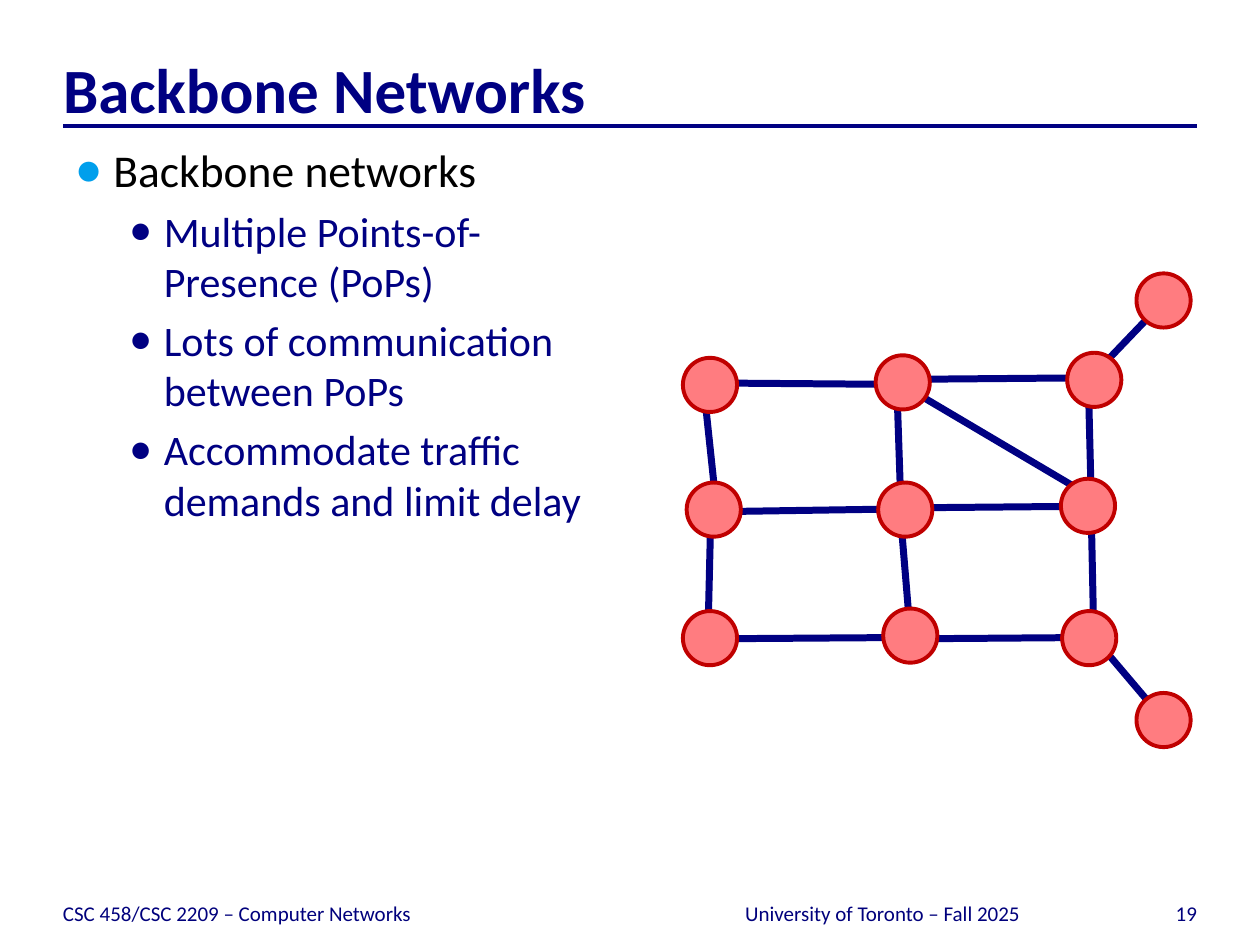
from lxml.etree import SubElement as Sub
from pptx import Presentation
from pptx.dml.color import RGBColor as RGB
from pptx.enum.shapes import MSO_CONNECTOR as Conn, MSO_SHAPE as Form
from pptx.enum.text import MSO_ANCHOR as Anchor, MSO_AUTO_SIZE as Fit, PP_ALIGN as Align
from pptx.oxml.ns import qn
from pptx.util import Inches, Pt

NAVY = RGB(0x00, 0x00, 0x82)
DARK = RGB(0x00, 0x00, 0x7C)
BLACK = RGB(0x00, 0x00, 0x00)
SKY = RGB(0x00, 0x9F, 0xEC)
PINK = RGB(0xFF, 0x7C, 0x80)
RED = RGB(0xC0, 0x00, 0x00)

COLS, ROWS = 100, 75
NODE = 4.3

# Left and top of each node, in grid cells
NODES = [
    (54.2, 28.4), (69.5, 28.2), (84.7, 28),
    (54.5, 38.3), (69.7, 38.3), (84.2, 38),
    (54.2, 48.5), (70.1, 48.3), (84.3, 48.5),
    (90.2, 21.7), (90.2, 55),
]
# Start and end of each link, in grid cells
ACROSS = [
    (70.2, 30.5, 56.9, 30.4), (84.6, 30, 73, 30.1),
    (71, 40.4, 57.7, 40.6), (84.3, 40.2, 72.7, 40.3),
    (71.2, 50.6, 56.8, 50.7), (86, 50.6, 72.7, 50.7),
]
DOWN = [
    (56.8, 39.7, 55.9, 31.2), (71.5, 40.2, 71.2, 31.2), (86.6, 39.3, 86.4, 31.2),
    (56.2, 50, 56.4, 41.5), (72.2, 49.7, 71.5, 41.3), (86.8, 50, 86.6, 40.4),
]
SLANT = [
    (92, 56.7, 87, 50.8), (92, 24.3, 87.6, 28.9), (85.9, 39, 72.2, 30.9),
]
POINTS = [
    "Multiple Points-of-Presence (PoPs)",
    "Lots of communication between PoPs",
    "Accommodate traffic demands and limit delay",
]


def write(para, text, size=12, color=DARK, bold=False, align=Align.LEFT):
    para.alignment = align
    run = para.add_run()
    run.text = text
    font = run.font
    font.name, font.size, font.bold = "Calibri", Pt(size), bold
    font.color.rgb = color


def bullet(para, color, share, left, hang):
    props = para._p.get_or_add_pPr()
    props.set("marL", str(Inches(left)))
    props.set("indent", str(-Inches(hang)))
    Sub(Sub(props, qn("a:buClr")), qn("a:srgbClr"), val=str(color))
    Sub(props, qn("a:buSzPct"), val=str(share * 1000))
    Sub(props, qn("a:buFont"), typeface="Calibri")
    Sub(props, qn("a:buChar"), char="●")


class Deck:
    def __init__(self):
        self.show = Presentation()
        self.show.slide_width, self.show.slide_height = Inches(10), Inches(7.5)
        self.wide = self.show.slide_width / COLS
        self.high = self.show.slide_height / ROWS
        self.slide = self.show.slides.add_slide(self.show.slide_layouts[1])

    def grid(self, *cells):
        """Turn alternating columns and rows into lengths."""
        return [round(c * (self.high if i % 2 else self.wide))
                for i, c in enumerate(cells)]

    def place(self, shape, box):
        shape.left, shape.top, shape.width, shape.height = self.grid(*box)

    def frame(self, shape, top=0):
        """Anchor text at the bottom, without side margins."""
        frame = shape.text_frame
        frame.word_wrap, frame.auto_size = True, Fit.NONE
        frame.vertical_anchor = Anchor.BOTTOM
        frame.margin_left = frame.margin_right = frame.margin_bottom = 0
        frame.margin_top = Inches(top)
        return frame.paragraphs[0]

    def title(self, text, box):
        shape = self.slide.shapes.title
        self.place(shape, box)
        write(self.frame(shape, 0.05), text, size=36, color=NAVY, bold=True)

    def body(self, head, points, box):
        shape = self.slide.placeholders[1]
        self.place(shape, box)
        frame = shape.text_frame
        frame.auto_size = Fit.NONE
        para = frame.paragraphs[0]
        write(para, head, size=26, color=BLACK)
        bullet(para, SKY, 95, 0.3, 0.3)
        for point in points:
            para = frame.add_paragraph()
            para.level = 1
            write(para, point, size=24, color=NAVY)
            bullet(para, NAVY, 85, 0.7, 0.27)

    def foot(self, text, left, width, align):
        shape = self.slide.shapes.add_textbox(*self.grid(left, 69.5, width, 4))
        write(self.frame(shape), text, align=align)

    def line(self, ends, width, group=None):
        home = group or self.slide
        link = home.shapes.add_connector(Conn.STRAIGHT, *self.grid(*ends))
        link.line.color.rgb, link.line.width = NAVY, Pt(width)
        Sub(link.element.spPr, qn("a:effectLst"))

    def node(self, spot, group):
        dot = group.shapes.add_shape(Form.OVAL, *self.grid(*spot, NODE, NODE))
        dot.shadow.inherit = False
        dot.fill.solid()
        dot.fill.fore_color.rgb = PINK
        dot.line.color.rgb, dot.line.width = RED, Pt(2.25)

    def graph(self, links, nodes):
        group = self.slide.shapes.add_group_shape()
        for ends in links:
            self.line(ends, 4, group)
        for spot in nodes:
            self.node(spot, group)


def main():
    deck = Deck()
    deck.line((5, 10, 95, 10), 2.25)
    deck.title("Backbone Networks", (5, 3.3, 90, 6.7))
    deck.body("Backbone networks", POINTS, (5, 10.8, 44.2, 58.7))
    deck.foot("CSC 458/CSC 2209 – Computer Networks", 5, 48.3, Align.LEFT)
    deck.foot("University of Toronto – Fall 2025", 54.2, 31.7, Align.CENTER)
    deck.foot("19", 86.7, 8.3, Align.RIGHT)
    deck.graph(ACROSS + DOWN + SLANT, NODES)
    deck.show.save("out.pptx")


if __name__ == "__main__":
    main()
